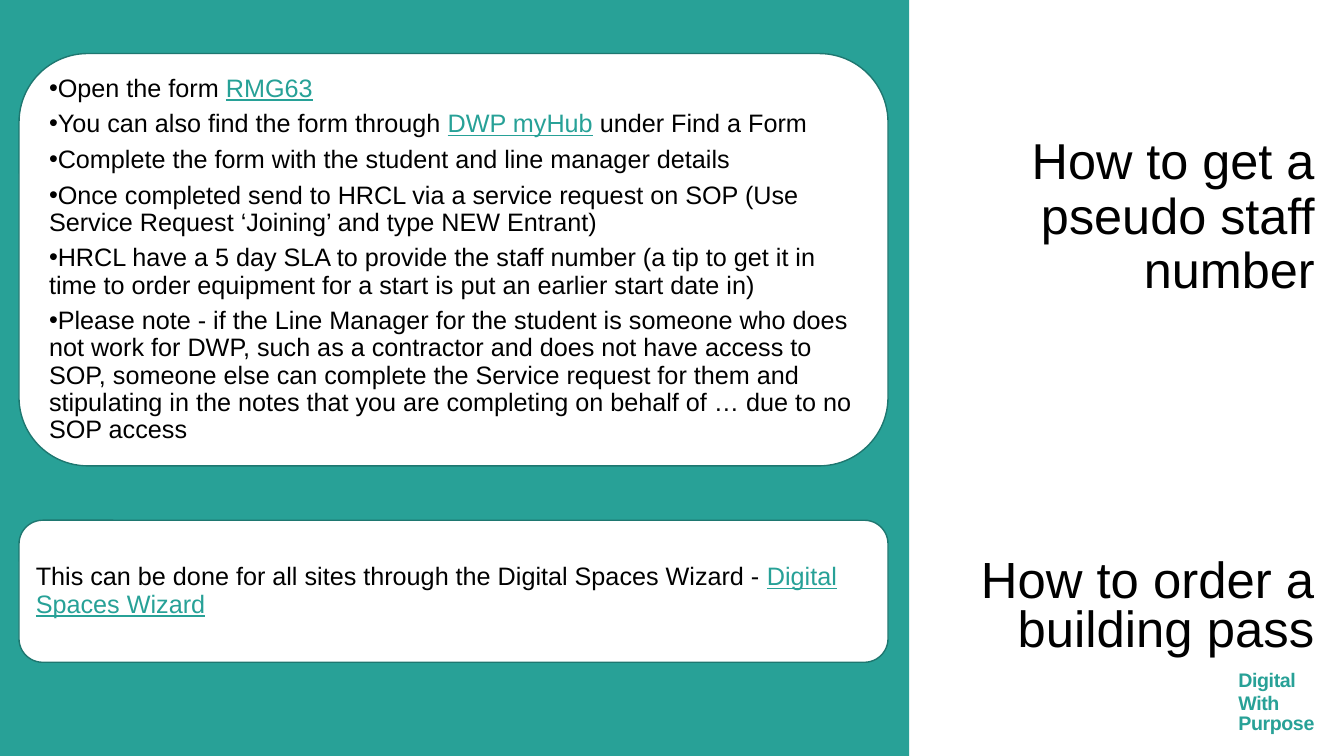
"""Build the slide on pseudo staff numbers and building passes."""
from lxml import etree
from pptx import Presentation, util as u
from pptx.dml import color
from pptx.enum import shapes, text
from pptx.oxml import ns

TEAL, LINK, EDGE, BLACK, WHITE = "28A197", "27A197", "1E7770", "000000", "FFFFFF"


def rgb(value):
    """Turn a hex string into a colour."""
    return color.RGBColor.from_string(value)


class SlideBuilder:
    """Hold the style and the current slide, and add elements to it."""

    FONT = "Arial"

    def __init__(self, slide):
        """Keep the slide to draw on."""
        self.slide = slide

    def panel(self, kind, box, fill, edge=None):
        """Add a filled preset shape."""
        panel = self.slide.shapes.add_shape(kind, *map(u.Cm, box))
        panel.shadow.inherit = False
        panel.fill.solid()
        panel.fill.fore_color.rgb = rgb(fill)
        if edge:
            panel.line.color.rgb = rgb(edge)
            panel.line.width = u.Pt(1)
        else:
            panel.line.fill.background()
        return panel

    def card(self, box, paragraphs, bullet=None):
        """Add a rounded white card with vertically centred text."""
        card = self.panel(shapes.MSO_SHAPE.ROUNDED_RECTANGLE, box, WHITE, EDGE)
        card.text_frame.vertical_anchor = text.MSO_ANCHOR.MIDDLE
        layout = {"alignment": text.PP_ALIGN.LEFT, "line_spacing": 0.9, "space_after": u.Pt(6)}
        self.fill_text(card.text_frame, paragraphs, layout, {"size": u.Pt(18)}, bullet)

    def label(self, box, paragraphs, layout, font, wrap=True, anchor=text.MSO_ANCHOR.BOTTOM):
        """Add a text box."""
        frame = self.slide.shapes.add_textbox(*map(u.Cm, box)).text_frame
        frame.word_wrap = wrap
        frame.vertical_anchor = anchor
        self.fill_text(frame, paragraphs, layout, font)
        return frame

    def heading(self, box, words, size, spacing):
        """Add a right-aligned heading."""
        layout = {"alignment": text.PP_ALIGN.RIGHT, "line_spacing": spacing, "space_after": u.Pt(6)}
        self.label(box, [[words]], layout, {"size": u.Pt(size)})

    def fill_text(self, frame, paragraphs, layout, font, bullet=None):
        """Fill a frame; every second run of a paragraph is a link."""
        for number, pieces in enumerate(paragraphs):
            paragraph = frame.add_paragraph() if number else frame.paragraphs[0]
            if bullet:
                self.bullet(paragraph, bullet)
            for name, value in layout.items():
                setattr(paragraph, name, value)
            for place, piece in enumerate(pieces):
                run = paragraph.add_run()
                run.text = piece
                is_link = place % 2 == 1
                for name, value in {"name": self.FONT, "underline": is_link, **font}.items():
                    setattr(run.font, name, value)
                run.font.color.rgb = rgb(LINK if is_link else BLACK)

    def bullet(self, paragraph, mark):
        """Give a paragraph a bullet with a hanging indent."""
        properties = paragraph._p.get_or_add_pPr()
        properties.set("marL", "0")
        properties.set("indent", str(-u.Cm(0.64)))
        etree.SubElement(properties, ns.qn("a:buFont"), typeface=self.FONT)
        etree.SubElement(properties, ns.qn("a:buChar"), char=mark)

    def motto(self, box, words):
        """Add the bold teal motto with tight letter spacing."""
        frame = self.label(box, [[word] for word in words], {"line_spacing": u.Pt(16)},
                           {"size": u.Pt(14), "bold": True}, False, text.MSO_ANCHOR.TOP)
        frame.paragraphs[-1].line_spacing = u.Pt(14.4)
        for paragraph in frame.paragraphs:
            run = paragraph.runs[0]
            run.font.color.rgb = rgb(TEAL)
            run._r.get_or_add_rPr().set("spc", "-30")


def main():
    """Draw the slide and save it."""
    deck = Presentation()
    deck.slide_width, deck.slide_height = u.Cm(33.87), u.Cm(19.05)
    builder = SlideBuilder(deck.slides.add_slide(deck.slide_layouts[6]))

    card_left, card_width = 0.48, 21.9
    heading_left, heading_width = 23.7, 9.68
    pass_top, pass_height = 13.11, 3.58
    staff_steps = [
        ["Open the form ", "RMG63"],
        ["You can also find the form through ", "DWP myHub", " under Find a Form"],
        ["Complete the form with the student and line manager details"],
        ["Once completed send to HRCL via a service request on SOP (Use Service Request "
         "‘Joining’ and type NEW Entrant)"],
        ["HRCL have a 5 day SLA to provide the staff number (a tip to get it in time to order "
         "equipment for a start is put an earlier start date in)"],
        ["Please note - if the Line Manager for the student is someone who does not work for "
         "DWP, such as a contractor and does not have access to SOP, someone else can complete "
         "the Service request for them and stipulating in the notes that you are completing on "
         "behalf of … due to no SOP access"],
    ]
    pass_steps = [["This can be done for all sites through the Digital Spaces Wizard - ",
                   "Digital Spaces Wizard"]]

    builder.panel(shapes.MSO_SHAPE.RECTANGLE, (0, 0, 22.91, 19.05), TEAL)
    builder.motto((30.96, 16.74, 2.44, 1.9), ["Digital", "With", "Purpose"])
    builder.heading((heading_left, 4.09, heading_width, pass_height),
                    "How to get a pseudo staff number", 36, 0.9)
    builder.card((card_left, 1.35, card_width, 10.39), staff_steps, "•")
    builder.card((card_left, pass_top, card_width, pass_height), pass_steps)
    builder.heading((heading_left, pass_top, heading_width, pass_height),
                    "How to order a building pass", 36.3, 0.8)
    deck.save("out.pptx")


if __name__ == "__main__":
    main()
